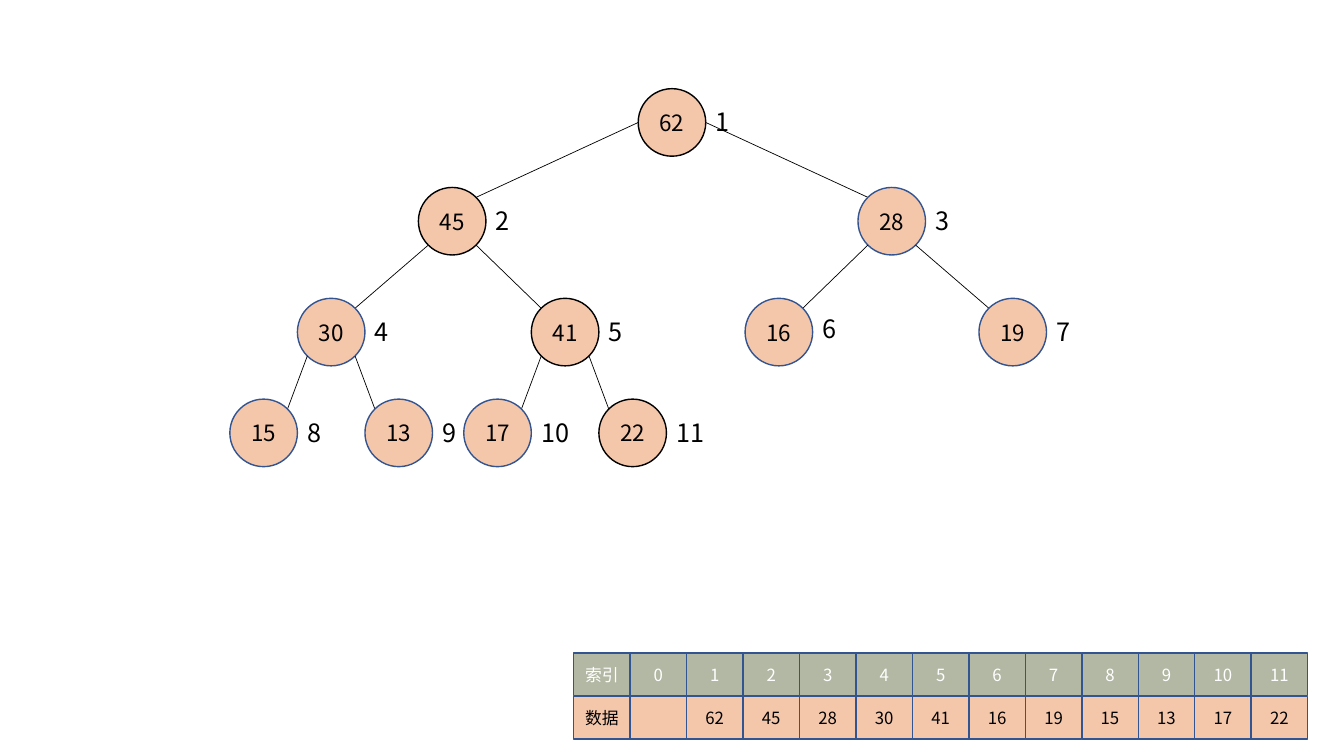
from math import sqrt

from lxml.etree import SubElement
from pptx import Presentation
from pptx.dml.color import RGBColor
from pptx.enum.shapes import MSO_CONNECTOR, MSO_SHAPE
from pptx.enum.text import MSO_ANCHOR, MSO_AUTO_SIZE, PP_ALIGN
from pptx.oxml.ns import qn
from pptx.util import Inches, Pt

FONT = "Noto Sans CJK SC"
COLORS = {
    "peach": "F4C7AB",
    "sage": "B2B8A3",
    "blue": "325491",
    "black": "000000",
    "white": "FFFFFF",
}
VALUES = [62, 45, 28, 30, 41, 16, 19, 15, 13, 17, 22]
HIGHLIGHTED = {1, 2, 5, 11}
NODE_SIZE = 0.67
NODE_LEFTS = [4.05, 1.87, 6.23, 0.67, 2.99, 5.11, 7.43, 0, 1.34, 2.32, 3.66]
LEVEL_TOPS = [0, 0.98, 2.08, 3.08]
CELL_WIDTH, CELL_HEIGHT, ROW_STEP = 0.56, 0.42, 0.43


def color(name):
    """Return the named colour."""
    return RGBColor.from_string(COLORS[name])


def write_text(shape, text, size, color_name):
    """Put one line of formatted text in a shape."""
    paragraph = shape.text_frame.paragraphs[0]
    paragraph.text = text
    for run in paragraph.runs:
        run.font.name = FONT
        run.font.size = Pt(size)
        run.font.color.rgb = color(color_name)
        SubElement(run._r.get_or_add_rPr(), qn("a:ea"), typeface=FONT)
    return paragraph


def add_filled_shape(slide, kind, box, fill, line, text, size, text_color):
    """Add an outlined shape with centred text."""
    shape = slide.shapes.add_shape(kind, *map(Inches, box))
    shape.shadow.inherit = False
    shape.fill.solid()
    shape.fill.fore_color.rgb = color(fill)
    shape.line.color.rgb = color(line)
    shape.line.width = Pt(1)
    shape.text_frame.vertical_anchor = MSO_ANCHOR.MIDDLE
    write_text(shape, text, size, text_color).alignment = PP_ALIGN.CENTER


def add_edge(slide, start, end):
    """Draw a thin line between two points."""
    connector = slide.shapes.add_connector(
        MSO_CONNECTOR.STRAIGHT, *map(Inches, (*start, *end)))
    connector.line.color.rgb = color("black")
    connector.line.width = Pt(0.5)
    SubElement(connector._element.spPr, qn("a:effectLst"))


def add_index_label(slide, left, top, text):
    """Add the index beside a node."""
    width = 0.34 if len(text) == 1 else 0.48
    label = slide.shapes.add_textbox(*map(Inches, (left, top, width, 0.4)))
    label.text_frame.word_wrap = False
    label.text_frame.auto_size = MSO_AUTO_SIZE.SHAPE_TO_FIT_TEXT
    write_text(label, text, 18, "black")


def add_heap_tree(slide, left, top):
    """Draw the binary heap with its top left corner at the given point."""
    radius = NODE_SIZE / 2
    diagonal = radius / sqrt(2)
    centers = {
        index: (left + node_left + radius,
                top + LEVEL_TOPS[index.bit_length() - 1] + radius)
        for index, node_left in enumerate(NODE_LEFTS, start=1)
    }
    for index, (x, y) in centers.items():
        if index > 1:
            parent = index // 2
            parent_x, parent_y = centers[parent]
            side = 1 if index % 2 else -1
            reach, drop = (radius, 0) if parent == 1 else (diagonal, diagonal)
            add_edge(slide, (parent_x + side * reach, parent_y + drop),
                     (x - side * diagonal, y - diagonal))
        add_filled_shape(
            slide, MSO_SHAPE.OVAL,
            (x - radius, y - radius, NODE_SIZE, NODE_SIZE), "peach",
            "black" if index in HIGHLIGHTED else "blue",
            str(VALUES[index - 1]), 16, "black")
        label_drop = 0.1 if index == 6 else 0.13
        add_index_label(slide, x + radius, y - radius + label_drop, str(index))


def add_array(slide, left, top):
    """Draw the index row and the data row from the given corner."""
    indexes = ["索引", *map(str, range(len(VALUES) + 1))]
    data = ["数据", "", *map(str, VALUES)]
    rows = [(indexes, "sage", "white"), (data, "peach", "black")]
    for column in range(len(indexes)):
        for row, (texts, fill, text_color) in enumerate(rows):
            box = (left + column * CELL_WIDTH, top + row * ROW_STEP,
                   CELL_WIDTH, CELL_HEIGHT)
            add_filled_shape(slide, MSO_SHAPE.RECTANGLE, box, fill, "blue",
                             texts[column], 12, text_color)


def main():
    """Build and save the heap slide."""
    presentation = Presentation()
    presentation.slide_width = Inches(13.33)
    presentation.slide_height = Inches(7.5)
    slide = presentation.slides.add_slide(presentation.slide_layouts[6])
    add_heap_tree(slide, 2.28, 0.88)
    add_array(slide, 5.69, 6.48)
    presentation.save("out.pptx")


if __name__ == "__main__":
    main()
